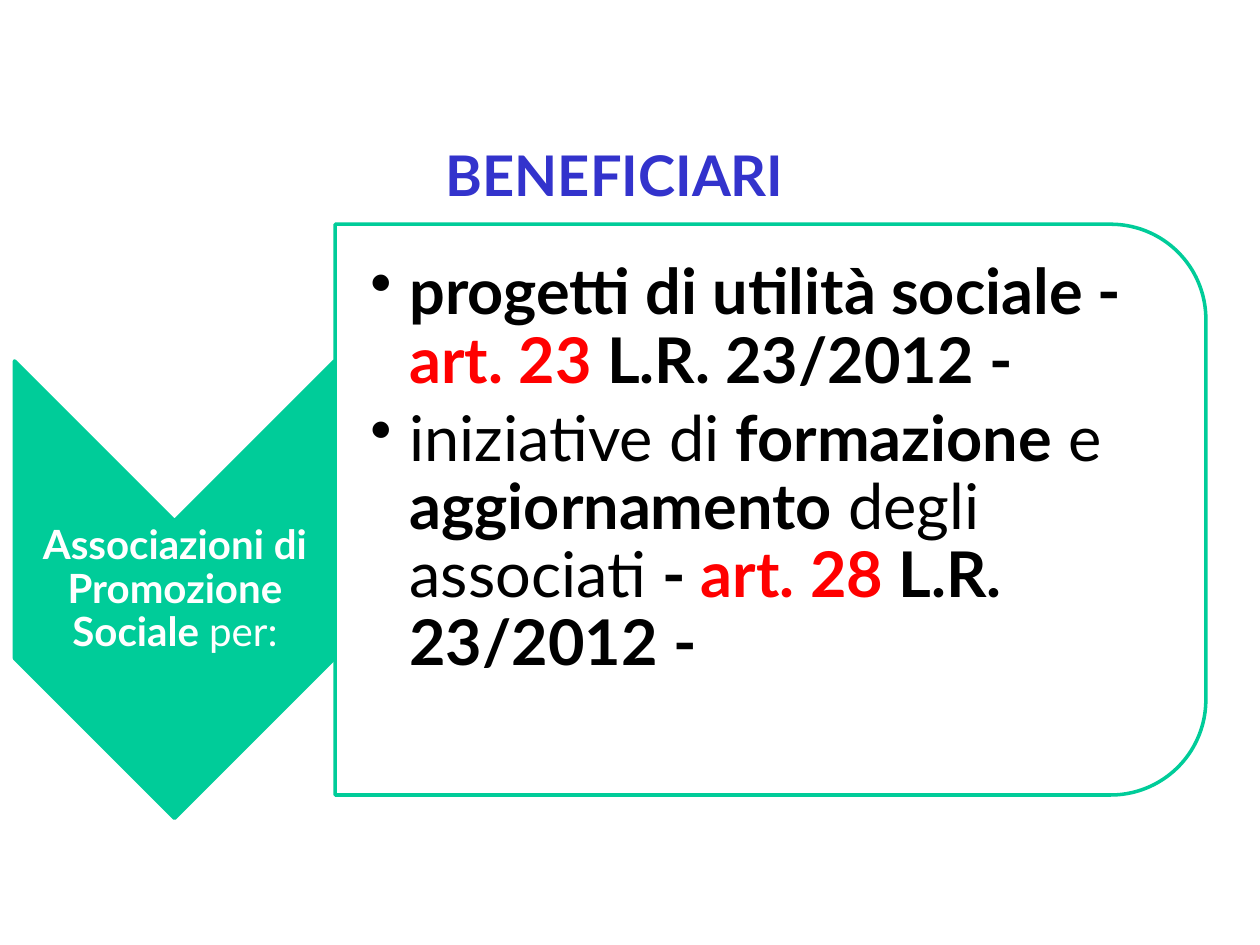
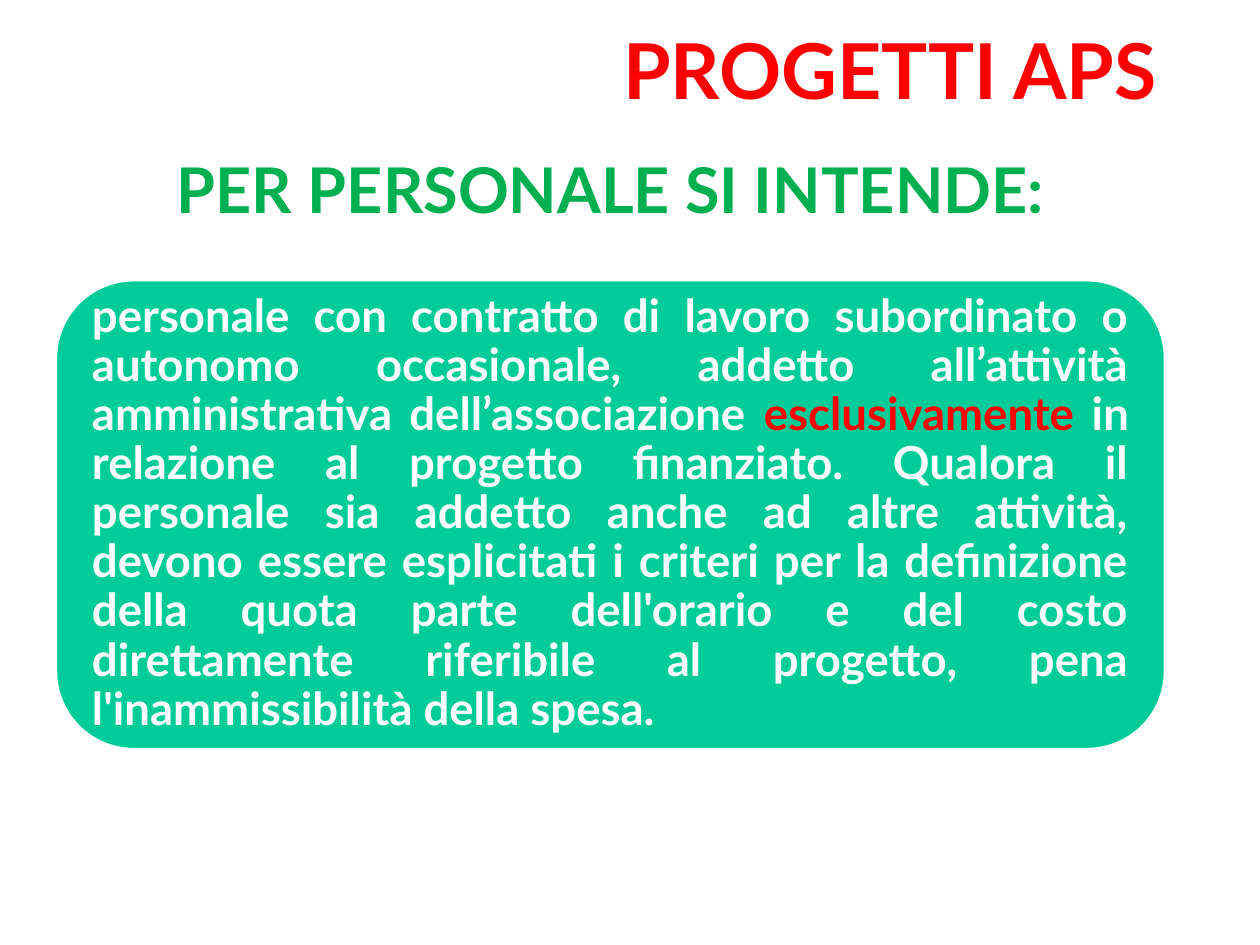
from lxml import etree
from pptx import Presentation
from pptx.dml.color import RGBColor
from pptx.enum.shapes import MSO_SHAPE
from pptx.enum.text import MSO_ANCHOR, MSO_AUTO_SIZE, PP_ALIGN
from pptx.oxml.ns import qn
from pptx.util import Inches, Pt

CHEVRON = MSO_SHAPE.CHEVRON
PANEL = MSO_SHAPE.ROUND_2_SAME_RECTANGLE
ROUNDED = MSO_SHAPE.ROUNDED_RECTANGLE
TOP, MIDDLE = MSO_ANCHOR.TOP, MSO_ANCHOR.MIDDLE
LEFT, CENTER, JUSTIFY = PP_ALIGN.LEFT, PP_ALIGN.CENTER, PP_ALIGN.JUSTIFY
NO_FIT = MSO_AUTO_SIZE.NONE

COLORS = {"white": "FFFFFF", "black": "000000", "teal": "00CC99",
          "blue": "3333CC", "green": "00B050", "red": "FF0000"}
FONT = "Lato"
TITLE_ONLY = 5


def rgb(name):
    return RGBColor.from_string(COLORS[name])


def write(tf, paragraphs, size, color, align=LEFT, anchor=MIDDLE,
          insets=(0.1, 0.05, 0.1, 0.05), spacing=1.0, gap=0, indent=0):
    tf.word_wrap = True
    tf.auto_size = NO_FIT
    tf.vertical_anchor = anchor
    tf.margin_left, tf.margin_top, tf.margin_right, tf.margin_bottom = map(Inches, insets)
    for i, runs in enumerate(paragraphs):
        p = tf.add_paragraph() if i else tf.paragraphs[0]
        p.alignment = align
        p.line_spacing = spacing
        p.space_before = Pt(gap if i else 0)
        if indent:
            pPr = p._p.get_or_add_pPr()
            pPr.set("marL", str(Inches(indent)))
            pPr.set("indent", str(Inches(-indent)))
            etree.SubElement(pPr, qn("a:buChar")).set("char", "•")
        for text, bold, run_color in runs:
            r = p.add_run()
            r.text = text
            r.font.name = FONT
            r.font.size = Pt(size)
            r.font.bold = bold
            r.font.color.rgb = rgb(run_color or color)


class Deck:
    def __init__(self):
        self.prs = Presentation()
        self.prs.slide_width, self.prs.slide_height = Inches(10), Inches(7.5)
        self.s = None

    def slide(self, title, box, size, color):
        self.s = self.prs.slides.add_slide(self.prs.slide_layouts[TITLE_ONLY])
        sp = self.s.shapes.title
        sp.left, sp.top, sp.width, sp.height = map(Inches, box)
        write(sp.text_frame, [[(title, True, None)]], size, color, align=CENTER)

    def shape(self, kind, box, fill, line, rotation=0, opacity=100):
        sp = self.s.shapes.add_shape(kind, *map(Inches, box))
        sp.rotation = rotation
        sp.shadow.inherit = False
        sp.fill.solid()
        sp.fill.fore_color.rgb = rgb(fill)
        if opacity < 100:
            clr = sp._element.spPr.find(qn("a:solidFill"))[0]
            etree.SubElement(clr, qn("a:alpha")).set("val", str(opacity * 1000))
        sp.line.color.rgb = rgb(line)
        sp.line.width = Pt(2)

    def text(self, box, paragraphs, size, color, **fmt):
        sp = self.s.shapes.add_textbox(*map(Inches, box))
        write(sp.text_frame, paragraphs, size, color, **fmt)


def beneficiaries(deck):
    deck.slide("BENEFICIARI", (0.51, 0.84, 8.74, 1.08), 32, "blue")
    deck.shape(CHEVRON, (-0.43, 3.41, 3.63, 2.54), "teal", "teal", rotation=90)
    deck.text((0.12, 4.14, 2.54, 1.09),
              [[("Associazioni di Promozione Sociale ", True, None), ("per:", False, None)]],
              23, "white", align=CENTER, insets=(0.02,) * 4, spacing=0.9)
    deck.shape(PANEL, (3.85, 0.59, 4.53, 6.91), "white", "teal", rotation=90, opacity=90)
    deck.text((2.66, 2, 6.69, 4.08), [
        [("progetti di utilità sociale - ", True, None), ("art. 23 ", True, "red"),
         ("L.R. 23/2012 -", True, None)],
        [("iniziative di ", False, None), ("formazione", True, None), (" e ", False, None),
         ("aggiornamento", True, None), (" degli associati ", False, None),
         ("- ", True, None), ("art. 28 ", True, "red"), ("L.R. 23/2012 -", True, None)],
    ], 36, "black", insets=(0.28, 0.03, 0.03, 0.65), spacing=0.9, gap=6, indent=0.31)


def staff(deck):
    deck.slide("PER PERSONALE SI INTENDE:", (0.44, 1.08, 8.81, 0.83), 36, "green")
    deck.shape(ROUNDED, (0.44, 2.22, 8.81, 3.73), "teal", "white")
    deck.text((0.62, 2.4, 8.45, 3.36), [[
        ("personale con contratto di lavoro subordinato o autonomo occasionale, addetto "
         "all’attività amministrativa dell’associazione ", True, None),
        ("esclusivamente", True, "red"),
        (" in relazione al progetto finanziato. Qualora il personale sia addetto anche ad "
         "altre attività, devono essere esplicitati i criteri per la definizione della quota "
         "parte dell'orario e del costo direttamente riferibile al progetto, pena "
         "l'inammissibilità della spesa.", True, None),
    ]], 26, "white", align=JUSTIFY, insets=(0.11,) * 4, spacing=0.9)
    deck.text((4.56, 0.13, 5.01, 0.84), [[("PROGETTI APS", True, None)]],
              44, "red", align=CENTER, anchor=TOP)


def main():
    deck = Deck()
    beneficiaries(deck)
    staff(deck)
    deck.prs.save("out.pptx")


if __name__ == "__main__":
    main()
